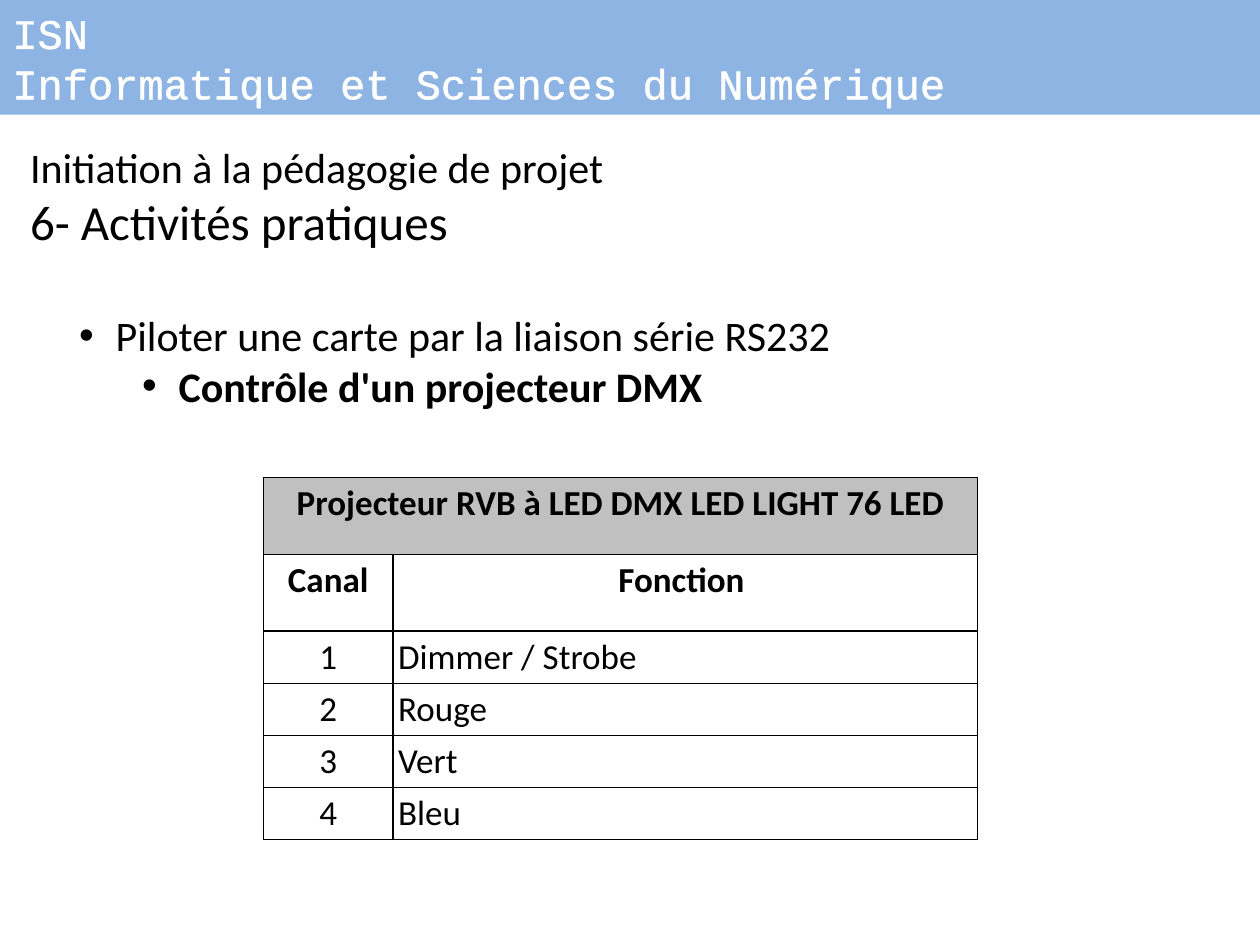
import dataclasses
import typing

import lxml.etree
import pptx
import pptx.dml.color
import pptx.enum.shapes
import pptx.enum.text
import pptx.oxml
import pptx.oxml.ns
import pptx.util

Inches = pptx.util.Inches
Pt = pptx.util.Pt
ALIGN = pptx.enum.text.PP_ALIGN

BLACK, WHITE, GREY, BLUE = "000000", "FFFFFF", "C0C0C0", "8EB4E3"


@dataclasses.dataclass
class Line:
    text: str
    size: int = 24
    bold: bool = False
    font: str = "Calibri"
    color: str = BLACK
    align: typing.Any = ALIGN.LEFT
    level: int = 0
    indent: float = 0
    space_before: float = 0


def rgb(color: str) -> pptx.dml.color.RGBColor:
    return pptx.dml.color.RGBColor.from_string(color)


def add_xml_line(parent: typing.Any, tag: str, color: str, width: float) -> typing.Any:
    """Append a solid line element (text outline or cell border)."""
    line = lxml.etree.SubElement(parent, pptx.oxml.ns.qn(tag), w=str(Pt(width)))
    fill = lxml.etree.SubElement(line, pptx.oxml.ns.qn("a:solidFill"))
    lxml.etree.SubElement(fill, pptx.oxml.ns.qn("a:srgbClr"), val=color)
    return line


def add_bullet(paragraph: typing.Any, indent: float) -> None:
    properties = paragraph._p.get_or_add_pPr()
    properties.set("marL", str(Inches(indent)))
    properties.set("indent", str(Inches(-0.29)))
    lxml.etree.SubElement(properties, pptx.oxml.ns.qn("a:buFont"), typeface="Arial")
    lxml.etree.SubElement(properties, pptx.oxml.ns.qn("a:buChar"), char="•")


def write_lines(text_frame: typing.Any, lines: list[Line]) -> None:
    for index, line in enumerate(lines):
        paragraph = text_frame.paragraphs[0] if index == 0 else text_frame.add_paragraph()
        paragraph.alignment = line.align
        paragraph.level = line.level
        if line.space_before:
            paragraph.space_before = Pt(line.space_before)
        if line.indent:
            add_bullet(paragraph, line.indent)
        run = paragraph.add_run()
        run.text = line.text
        font_format = {"name": line.font, "size": Pt(line.size), "bold": line.bold}
        for name, value in font_format.items():
            setattr(run.font, name, value)
        run.font.color.rgb = rgb(line.color)


def add_banner(slide: typing.Any, texts: list[str]) -> None:
    shape = slide.shapes.add_shape(
        pptx.enum.shapes.MSO_SHAPE.RECTANGLE, 0, 0, Inches(10), Inches(0.91))
    shape.shadow.inherit = False
    shape.fill.solid()
    shape.fill.fore_color.rgb = rgb(BLUE)
    shape.line.fill.background()
    write_lines(shape.text_frame,
                [Line(text, font="Courier New", color=WHITE) for text in texts])
    # White outline around the letters
    for paragraph in shape.text_frame.paragraphs:
        properties = paragraph.runs[0].font._element
        properties.insert(0, add_xml_line(properties, "a:ln", WHITE, 1.45))


def add_body(slide: typing.Any, lines: list[Line]) -> None:
    box = slide.shapes.add_textbox(Inches(0.14), Inches(1.07), Inches(9.86), Inches(4.68))
    box.text_frame.word_wrap = True
    write_lines(box.text_frame, lines)


def fill_cell(cell: typing.Any, line: Line, color: str) -> None:
    for side in ("left", "right", "top", "bottom"):
        setattr(cell, f"margin_{side}", Inches(0.04))
    write_lines(cell.text_frame, [line])
    properties = cell._tc.get_or_add_tcPr()
    for tag in ("a:lnL", "a:lnR", "a:lnT", "a:lnB"):
        add_xml_line(properties, tag, BLACK, 1)
    cell.fill.solid()
    cell.fill.fore_color.rgb = rgb(color)


def add_channel_table(slide: typing.Any, title: str, header: tuple[str, str],
                      functions: list[str]) -> None:
    rows = [(title, ""), header]
    rows += [(str(number), name) for number, name in enumerate(functions, 1)]
    table = slide.shapes.add_table(
        len(rows), 2, Inches(2.09), Inches(3.79), Inches(5.67), Inches(2.86)).table
    table.first_row = table.horz_banding = False
    for column, width in zip(table.columns, (1.03, 4.64)):
        column.width = Inches(width)
    for row_index, texts in enumerate(rows):
        is_heading = row_index < 2
        table.rows[row_index].height = Inches(0.61 if is_heading else 0.41)
        for column_index, text in enumerate(texts):
            centred = is_heading or column_index == 0
            line = Line(text, 20, is_heading, align=ALIGN.CENTER if centred else ALIGN.LEFT)
            fill_cell(table.cell(row_index, column_index), line,
                      GREY if row_index == 0 else WHITE)
    table.cell(0, 0).merge(table.cell(0, 1))


def main() -> None:
    presentation = pptx.Presentation()
    presentation.slide_width, presentation.slide_height = Inches(10), Inches(7.5)
    slide = presentation.slides.add_slide(presentation.slide_layouts[6])

    # Course banner
    add_banner(slide, ["ISN", "Informatique et Sciences du Numérique"])

    # Section title and topics
    add_body(slide, [
        Line("Initiation à la pédagogie de projet"),
        Line("6- Activités pratiques", 28),
        Line("Piloter une carte par la liaison série RS232", indent=0.68, space_before=34),
        Line("Contrôle d'un projecteur DMX", bold=True, level=1, indent=1.18),
    ])

    # DMX channels
    add_channel_table(slide, "Projecteur RVB à LED DMX LED LIGHT 76 LED",
                      ("Canal", "Fonction "),
                      ["Dimmer / Strobe", "Rouge", "Vert", "Bleu"])

    presentation.save("out.pptx")


if __name__ == "__main__":
    main()
